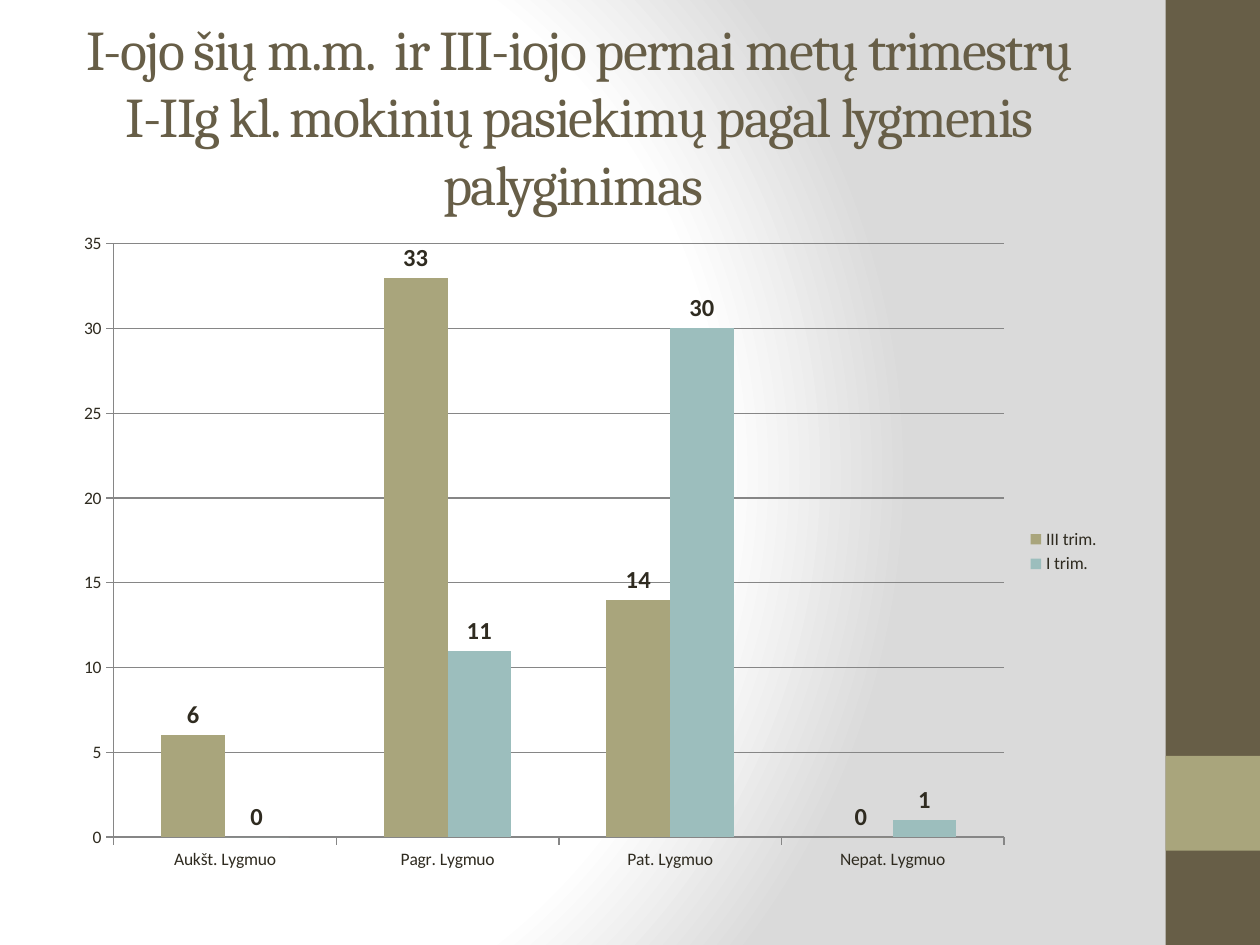
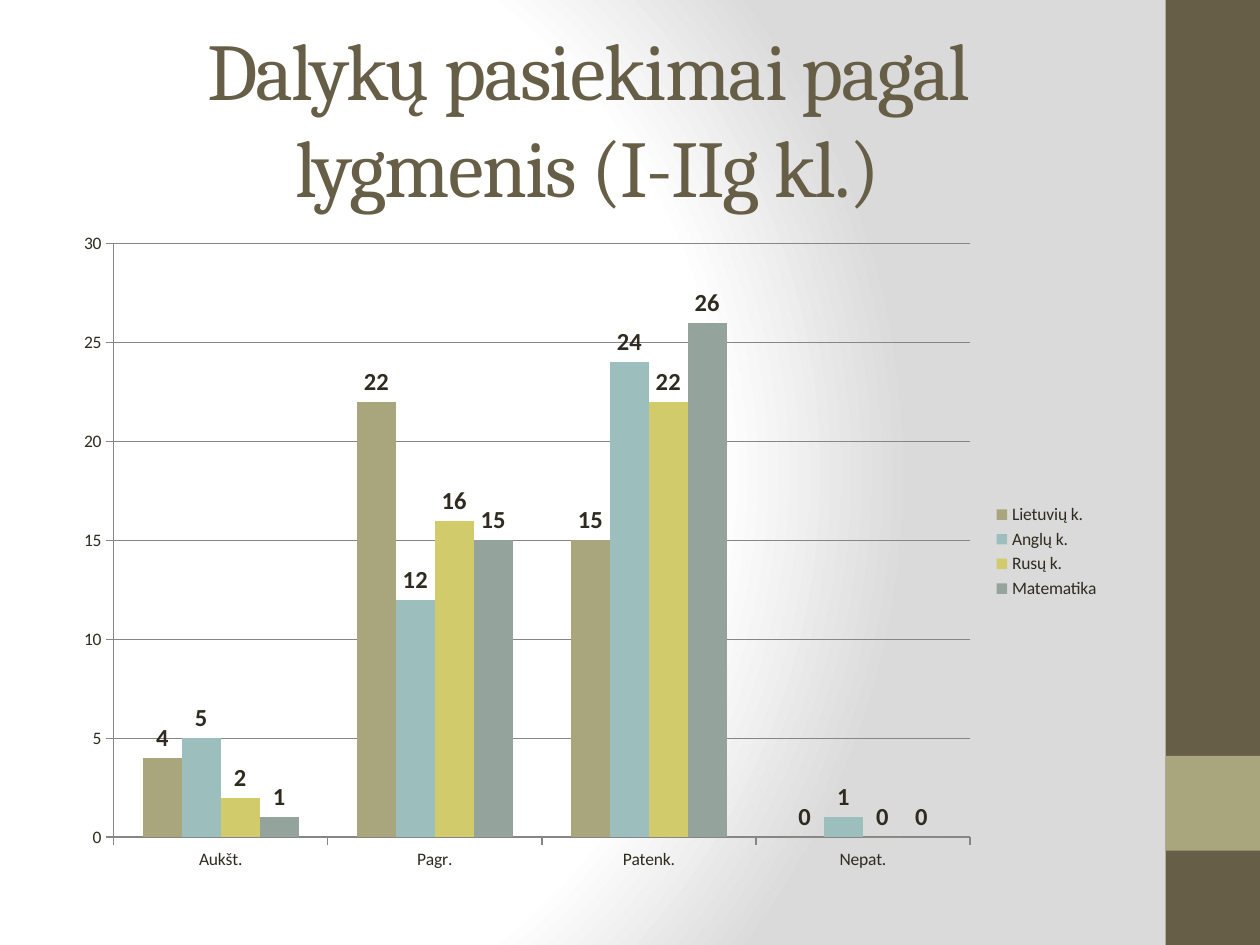
from lxml.etree import SubElement
from pptx import Presentation
from pptx.chart.data import CategoryChartData
from pptx.dml.color import RGBColor
from pptx.enum.chart import XL_CHART_TYPE, XL_LABEL_POSITION, XL_LEGEND_POSITION, XL_TICK_MARK
from pptx.enum.shapes import MSO_SHAPE
from pptx.enum.text import MSO_ANCHOR, PP_ALIGN
from pptx.oxml.ns import qn
from pptx.util import Cm, Pt

COLORS = {
    "brown": "675E47", "khaki": "A9A57C", "teal": "9CBEBD", "yellow": "D2CB6C",
    "sage": "95A39D", "ink": "2F2B20", "grid": "868686", "white": "FFFFFF", "shade": "DADADA",
}
SERIES_COLORS = ["khaki", "teal", "yellow", "sage"]
BANDS = [("brown", 0, 19.05), ("khaki", 15.24, 1.91)]

SLIDES = [
    {
        "title": "I-ojo šių m.m.  ir III-iojo pernai metų trimestrų "
                 "I-IIg kl. mokinių pasiekimų pagal lygmenis palyginimas ",
        "left": 1.09, "top": 0.74, "size": 32, "axis_max": 35,
        "levels": ["Aukšt. Lygmuo", "Pagr. Lygmuo", "Pat. Lygmuo", "Nepat. Lygmuo"],
        "results": {"III trim.": [6, 33, 14, 0], "I trim.": [0, 11, 30, 1]},
    },
    {
        "title": "Dalykų pasiekimai pagal lygmenis (I-IIg kl.)",
        "left": 1.27, "top": 0.76, "size": 46, "axis_max": 30,
        "levels": ["Aukšt.", "Pagr.", "Patenk.", "Nepat."],
        "results": {
            "Lietuvių k.": [4, 22, 15, 0],
            "Anglų k.": [5, 12, 24, 1],
            "Rusų k.": [2, 16, 22, 0],
            "Matematika": [1, 15, 26, 0],
        },
    },
]


def rgb(name):
    return RGBColor.from_string(COLORS[name])


def add_text(slide, text, *, left, top, width, height, size, font, color, spacing):
    """Add a centred text box; spacing is the letter spacing in points."""
    box = slide.shapes.add_textbox(Cm(left), Cm(top), Cm(width), Cm(height))
    frame = box.text_frame
    frame.word_wrap = True
    frame.vertical_anchor = MSO_ANCHOR.MIDDLE
    paragraph = frame.paragraphs[0]
    paragraph.alignment = PP_ALIGN.CENTER
    run = paragraph.add_run()
    run.text = text
    run.font.size = Pt(size)
    run.font.name = font
    run.font.color.rgb = rgb(color)
    run.font._element.set("spc", str(spacing * 100))


prs = Presentation()
prs.slide_width, prs.slide_height = Cm(25.4), Cm(19.05)

# Shared background: a radial gradient on the master
master = prs.slide_master
master.background.fill.gradient()
gradient = master.element.find(".//" + qn("p:bgPr")).find(qn("a:gradFill"))
for part in list(gradient):
    gradient.remove(part)
stops = SubElement(gradient, qn("a:gsLst"))
for position, name in [(0, "white"), (75, "white"), (100, "shade")]:
    stop = SubElement(stops, qn("a:gs"), pos=str(position * 1000))
    SubElement(stop, qn("a:srgbClr"), val=COLORS[name])
radial = SubElement(gradient, qn("a:path"), path="circle")
SubElement(radial, qn("a:fillToRect"), l="20000", t="50000", r="100000", b="50000")

for content in SLIDES:
    slide = prs.slides.add_slide(prs.slide_layouts[6])

    for color, top, height in BANDS:
        band = slide.shapes.add_shape(MSO_SHAPE.RECTANGLE, Cm(23.5), Cm(top), Cm(1.9), Cm(height))
        band.shadow.inherit = False
        band.fill.solid()
        band.fill.fore_color.rgb = rgb(color)
        band.line.fill.background()

    add_text(slide, content["title"], left=content["left"], top=content["top"], width=21.16,
             height=3.18, size=content["size"], font="Cambria", color="brown", spacing=-1)

    data = CategoryChartData()
    data.categories = content["levels"]
    for name, counts in content["results"].items():
        data.add_series(name, counts)
    chart = slide.shapes.add_chart(XL_CHART_TYPE.COLUMN_CLUSTERED, Cm(1.27), Cm(4.45),
                                   Cm(21.16), Cm(13.34), data).chart
    chart.has_title = False
    chart.font.size = Pt(10)
    chart.font.name = "Calibri"
    chart.font.color.rgb = rgb("ink")
    chart.has_legend = True
    chart.legend.position = XL_LEGEND_POSITION.RIGHT
    chart.legend.include_in_layout = False

    levels_axis, counts_axis = chart.category_axis, chart.value_axis
    counts_axis.minimum_scale = 0
    counts_axis.maximum_scale = content["axis_max"]
    counts_axis.major_unit = 5
    counts_axis.has_major_gridlines = True
    for axis in (levels_axis, counts_axis):
        axis.major_tick_mark = XL_TICK_MARK.OUTSIDE
        axis.minor_tick_mark = XL_TICK_MARK.NONE
    for rule in (levels_axis, counts_axis, counts_axis.major_gridlines):
        rule.format.line.color.rgb = rgb("grid")
        rule.format.line.width = Pt(0.75)

    plot = chart.plots[0]
    plot.gap_width = 150
    plot.overlap = 0
    plot.vary_by_categories = False
    for series, color in zip(plot.series, SERIES_COLORS):
        series.format.fill.solid()
        series.format.fill.fore_color.rgb = rgb(color)
        labels = series.data_labels
        labels.show_value = True
        labels.position = XL_LABEL_POSITION.OUTSIDE_END
        labels.font.size = Pt(14)
        labels.font.bold = True
        labels.font.name = "Calibri"
        labels.font.color.rgb = rgb("ink")

prs.save("out.pptx")
